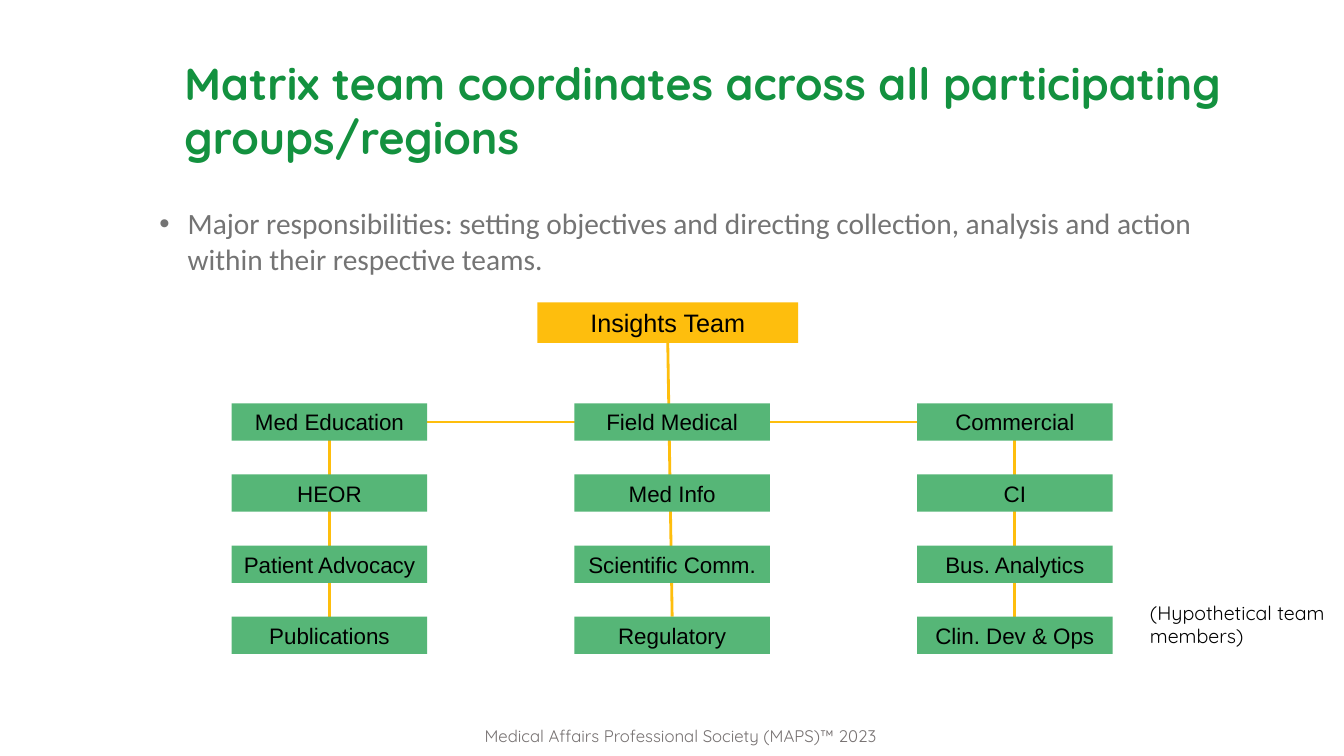
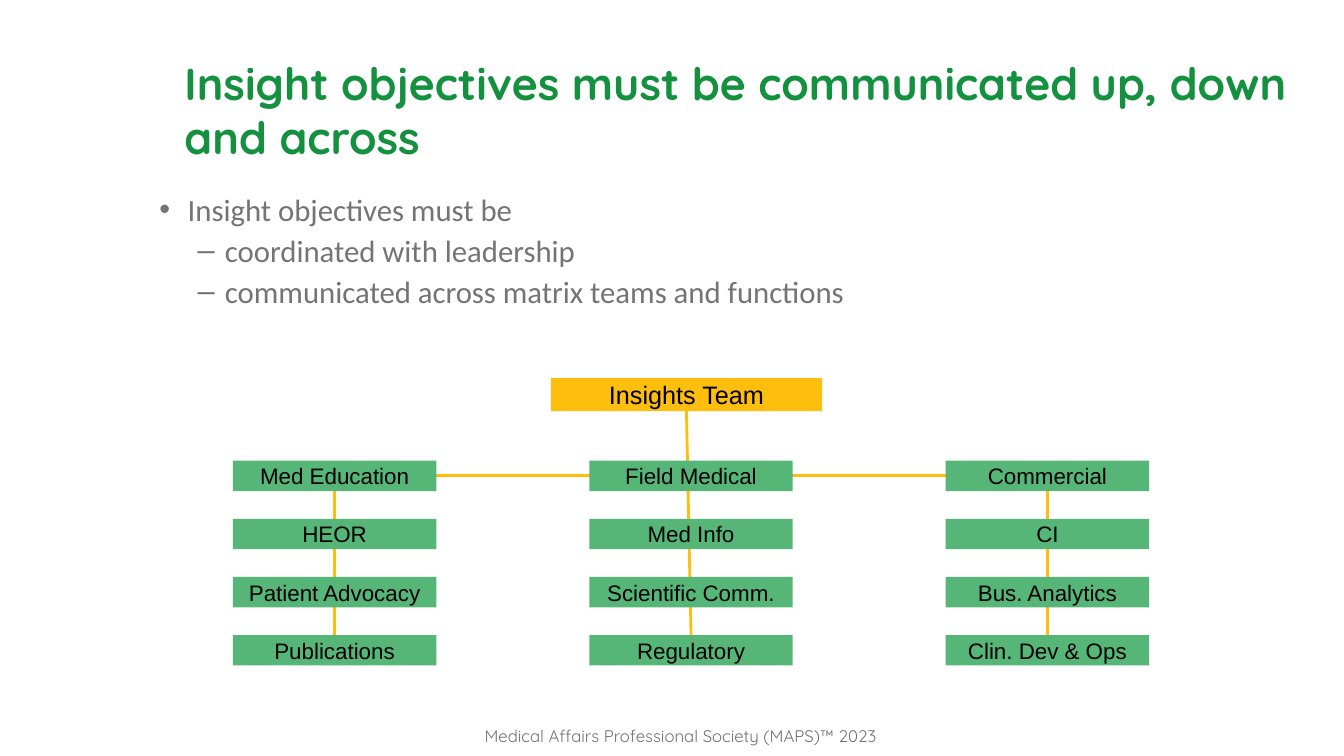
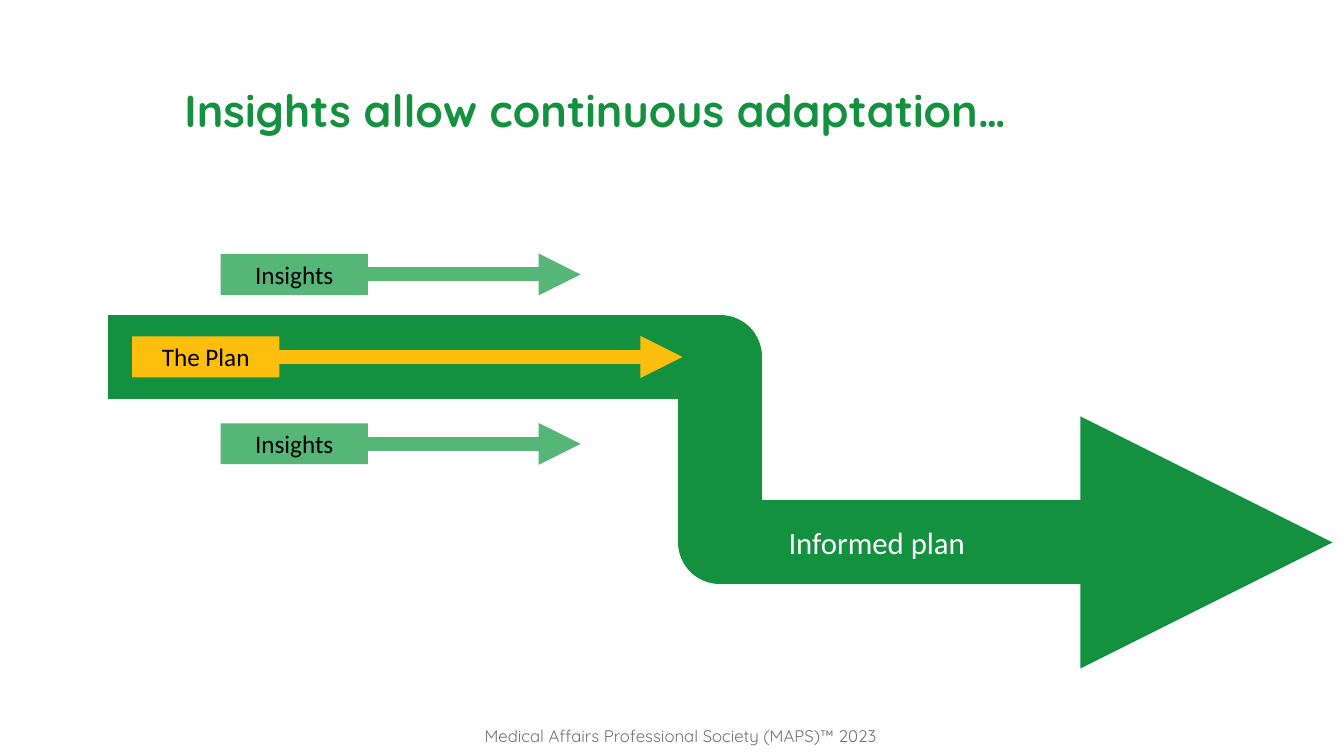
from pptx import Presentation
from pptx import util as u
from pptx.dml.color import RGBColor
from pptx.enum import shapes, text
from pptx.oxml.ns import qn
from lxml import etree

COLOURS = {
    "green": "13913F",
    "leaf": "56B677",
    "amber": "FEBE0D",
    "body": "747474",
    "footer": "767171",
    "black": "000000",
    "white": "FFFFFF",
}
LEFT, CENTRE = text.PP_ALIGN.LEFT, text.PP_ALIGN.CENTER
TOP, MIDDLE = text.MSO_ANCHOR.TOP, text.MSO_ANCHOR.MIDDLE
INSET = 0.13

# Indent of the text and of the mark (cm), and the mark, for each level
BULLETS = [(0.71, -0.71, "•"), (1.65, -0.69, "–")]

TEAMS = [
    ["Med Education", "HEOR", "Patient Advocacy", "Publications"],
    ["Field Medical", "Med Info", "Scientific Comm.", "Regulatory"],
    ["Commercial", "CI", "Bus. Analytics", "Clin. Dev & Ops"],
]


def colour(name):
    return RGBColor.from_string(COLOURS[name])


def set_frame(shape, anchor=TOP, side=INSET):
    frame = shape.text_frame
    frame.word_wrap = True
    frame.vertical_anchor = anchor
    frame.margin_left = frame.margin_right = u.Cm(side)
    frame.margin_top = frame.margin_bottom = u.Cm(INSET)
    return frame


def add_span(para, words, font, size, ink, bold=False):
    span = para.add_run()
    span.text = words
    span.font.name = font
    span.font.size = u.Pt(size)
    span.font.bold = bold
    span.font.color.rgb = colour(ink)


def add_text(slide, box, words, font, size, ink, align=LEFT, bold=False, anchor=TOP):
    shape = slide.shapes.add_textbox(*map(u.Cm, box))
    para = set_frame(shape, anchor).paragraphs[0]
    para.alignment = align
    add_span(para, words, font, size, ink, bold)


def add_label(slide, box, words, fill, font, size, anchor=MIDDLE):
    shape = slide.shapes.add_shape(shapes.MSO_SHAPE.RECTANGLE, *map(u.Cm, box))
    shape.shadow.inherit = False
    shape.fill.solid()
    shape.fill.fore_color.rgb = colour(fill)
    shape.line.fill.background()
    para = set_frame(shape, anchor).paragraphs[0]
    para.alignment = CENTRE
    add_span(para, words, font, size, "black")


def add_line(slide, start, end, ink, width, arrow=False, elbow=False):
    kind = shapes.MSO_CONNECTOR.ELBOW if elbow else shapes.MSO_CONNECTOR.STRAIGHT
    line = slide.shapes.add_connector(kind, *map(u.Cm, (*start, *end)))
    line.line.color.rgb = colour(ink)
    line.line.width = u.Pt(width)
    properties = line._element.spPr
    stroke = properties.find(qn("a:ln"))
    etree.SubElement(stroke, qn("a:round"))
    if arrow:
        etree.SubElement(stroke, qn("a:tailEnd"), type="triangle")
    etree.SubElement(properties, qn("a:effectLst"))


def add_bullets(slide, box, items, size):
    frame = set_frame(slide.shapes.add_textbox(*map(u.Cm, box)))
    for number, (level, words) in enumerate(items):
        para = frame.add_paragraph() if number else frame.paragraphs[0]
        margin, indent, mark = BULLETS[level]
        properties = para._p.get_or_add_pPr()
        properties.set("marL", str(u.Cm(margin)))
        properties.set("indent", str(u.Cm(indent)))
        etree.SubElement(properties, qn("a:buFont"), typeface="Arial")
        etree.SubElement(properties, qn("a:buChar"), char=mark)
        para.level = level
        if number:
            para.space_before = u.Pt(3)
        add_span(para, words, "Calibri", size, "body")


def add_page(deck, title):
    """Blank slide with the shared title and footer."""
    slide = deck.slides.add_slide(deck.slide_layouts[6])
    add_text(slide, (1.32, 18.16, 31.67, 0.79),
             "Medical Affairs Professional Society (MAPS)™ 2023",
             "Quicksand", 12, "footer", align=CENTRE)
    add_text(slide, (4.52, 1.12, 28.3, 3.3), title,
             "Quicksand", 32, "green", bold=True, anchor=MIDDLE)
    return slide


def add_team_chart(slide, box):
    """Lead team above three columns of groups, in proportion to the box."""
    left, top, width, height = box
    lead_left, lead_width, lead_height = left + 0.347 * width, 0.296 * width, 0.115 * height
    cell_width, cell_height = 0.222 * width, 0.106 * height
    column_lefts = [left + i * (width - cell_width) / 2 for i in range(3)]
    first_row = top + 0.287 * height
    row_step = (top + height - cell_height - first_row) / 3
    row_tops = [first_row + i * row_step for i in range(4)]

    # Lines, behind the boxes
    centres = [x + cell_width / 2 for x in column_lefts]
    bus = first_row + cell_height / 2
    add_line(slide, (centres[0], bus), (centres[2], bus), "amber", 2)
    for x in (centres[0], centres[2]):
        add_line(slide, (x, bus), (x, row_tops[-1]), "amber", 2)
    add_line(slide, (lead_left + lead_width / 2, top + lead_height),
             (centres[1], row_tops[-1]), "amber", 2)

    # Boxes
    add_label(slide, (lead_left, top, lead_width, lead_height),
              "Insights Team", "amber", "Arial", 18)
    for x, groups in zip(column_lefts, TEAMS):
        for y, group in zip(row_tops, groups):
            add_label(slide, (x, y, cell_width, cell_height), group, "leaf", "Arial", 16)


def add_flow(slide, box, words, fill):
    """Labelled box with an arrow running to the right edge of the region."""
    left, top, width, height = box
    label_width, middle = 3.71, top + height / 2
    add_line(slide, (left + label_width, middle), (left + width, middle),
             fill, 10, arrow=True)
    add_label(slide, (left, top, label_width, height), words, fill, "Calibri", 18, TOP)


def matrix_slide(deck):
    slide = add_page(deck, "Matrix team coordinates across all participating groups/regions")
    add_bullets(slide, (3.89, 5.05, 27.76, 4.1), [
        (0, "Major responsibilities: setting objectives and directing collection, "
            "analysis and action within their respective teams."),
    ], 21)
    add_team_chart(slide, (5.84, 7.62, 22.2, 8.86))
    add_text(slide, (28.85, 15.01, 4.83, 1.45), "(Hypothetical team members)",
             "Quicksand", 14, "black")


def objectives_slide(deck):
    slide = add_page(deck, "Insight objectives must be communicated up, down and across")
    add_bullets(slide, (3.89, 4.67, 29.21, 4.2), [
        (0, "Insight objectives must be"),
        (1, "coordinated with leadership"),
        (1, "communicated across matrix teams and functions"),
    ], 22)
    add_team_chart(slide, (5.87, 9.53, 23.09, 7.24))


def adaptation_slide(deck):
    slide = add_page(deck, "Insights allow continuous adaptation…")
    # Plan turning into the informed plan
    add_line(slide, (2.72, 8.99), (33.58, 13.67), "green", 60, arrow=True, elbow=True)
    add_flow(slide, (3.33, 8.48, 13.87, 1.03), "The Plan", "amber")
    add_text(slide, (18.36, 13.06, 7.47, 1.19), "Informed plan",
             "Calibri", 22, "white", align=CENTRE)
    # Insights on either side
    for top in (6.4, 10.67):
        add_flow(slide, (5.56, top, 9.07, 1.03), "Insights", "leaf")


def main():
    deck = Presentation()
    deck.slide_width, deck.slide_height = u.Cm(33.87), u.Cm(19.05)
    matrix_slide(deck)
    objectives_slide(deck)
    adaptation_slide(deck)
    deck.save("out.pptx")


if __name__ == "__main__":
    main()
